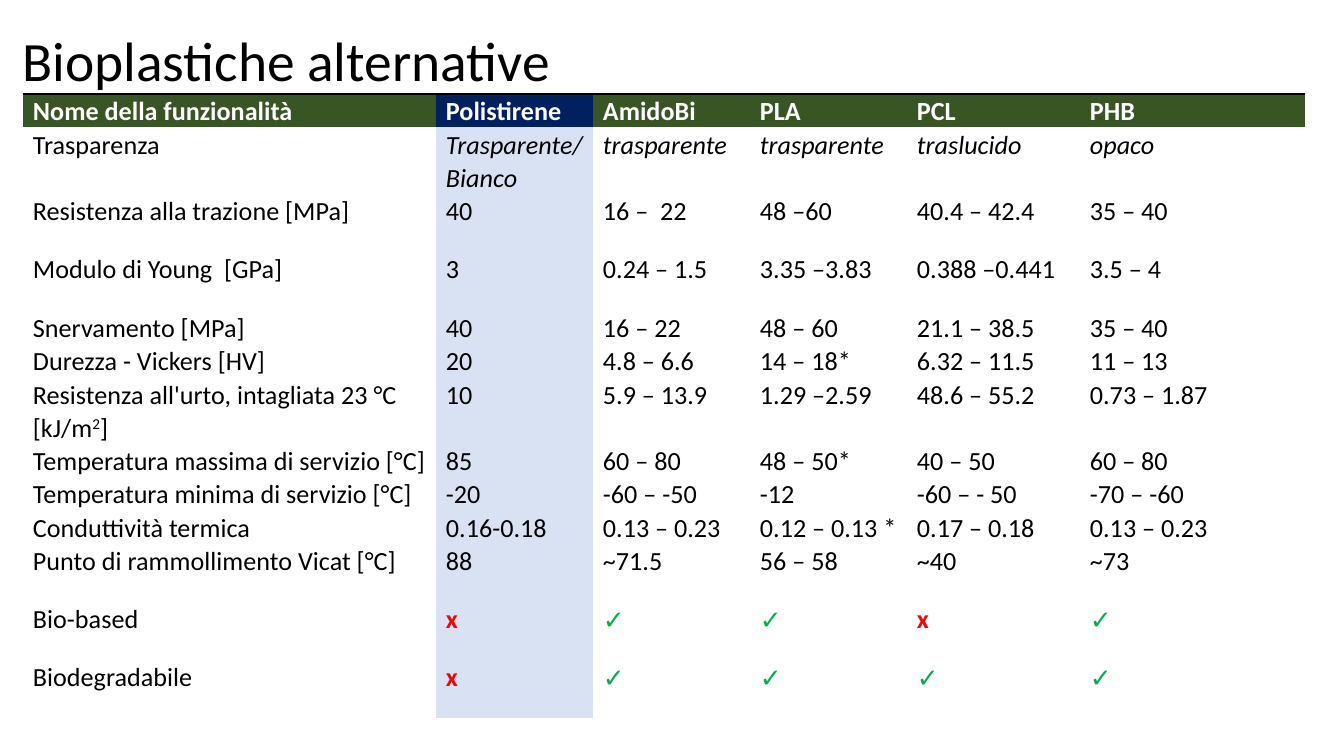
from lxml import etree
from pptx import Presentation
from pptx.dml.color import RGBColor
from pptx.enum.text import MSO_ANCHOR
from pptx.oxml.ns import qn
from pptx.util import Pt

EMU_PER_PX = 914400 / 134.4
TOP = MSO_ANCHOR.TOP
NO_STYLE = "{2D5ABB26-0587-4C30-8999-92F81FD0307C}"
BLACK, WHITE, GREEN, NAVY = "000000", "FFFFFF", "385623", "002060"
PALE_BLUE, RED, TICK_GREEN = "D9E2F3", "FF0000", "00B050"

COLUMN_WIDTHS = [413, 157, 157, 157, 173, 225]
ROW_HEIGHTS = [31, 65, 58, 59] + [31] * 6 + [58] * 3
ROWS = [
    ("Nome della funzionalità", "Polistirene", "AmidoBi", "PLA", "PCL", "PHB"),
    ("Trasparenza", "Trasparente/Bianco", "trasparente", "trasparente", "traslucido", "opaco"),
    ("Resistenza alla trazione [MPa]", "40", "16 –  22", "48 –60", "40.4 – 42.4", "35 – 40"),
    ("Modulo di Young  [GPa]", "3", "0.24 – 1.5", "3.35 –3.83", "0.388 –0.441", "3.5 – 4"),
    ("Snervamento [MPa]", "40", "16 – 22", "48 – 60", "21.1 – 38.5", "35 – 40"),
    ("Durezza - Vickers [HV]", "20", "4.8 – 6.6", "14 – 18*", "6.32 – 11.5", "11 – 13"),
    ("Resistenza all'urto, intagliata 23 °C [kJ/m^2^]", "10", "5.9 – 13.9", "1.29 –2.59",
     "48.6 – 55.2", "0.73 – 1.87"),
    ("Temperatura massima di servizio [°C]", "85", "60 – 80", "48 – 50*", "40 – 50", "60 – 80"),
    ("Temperatura minima di servizio [°C]", "-20", "-60 – -50", "-12", "-60 – - 50", "-70 – -60"),
    ("Conduttività termica", "0.16-0.18", "0.13 – 0.23", "0.12 – 0.13 *", "0.17 – 0.18",
     "0.13 – 0.23"),
    ("Punto di rammollimento Vicat [°C]", "88", "~71.5", "56 – 58", "~40", "~73"),
    ("Bio-based", "x", "✓", "✓", "x", "✓"),
    ("Biodegradabile", "x", "✓", "✓", "✓", "✓"),
]


def px(length):
    return round(length * EMU_PER_PX)


def color(value):
    return RGBColor.from_string(value)


class SlideBuilder:
    font = "Calibri"
    table_size = 14

    def __init__(self, slide):
        self.slide = slide

    def fill_paragraph(self, para, text, size, ink=BLACK, bold=False, italic=False, font=None):
        """Fill a paragraph; text between carets is superscript."""
        para.font.name = font or self.font
        para.font.size = Pt(size)
        para.font.bold, para.font.italic = bold, italic
        para.font.color.rgb = color(ink)
        for index, part in enumerate(text.split("^")):
            span = para.add_run()
            span.text = part
            if index % 2:
                span._r.get_or_add_rPr().set("baseline", "30000")

    def title(self, text, left, top, width, height):
        box = self.slide.shapes.add_textbox(px(left), px(top), px(width), px(height))
        frame = box.text_frame
        frame.word_wrap = True
        frame.vertical_anchor = TOP
        frame.margin_top = px(10)
        self.fill_paragraph(frame.paragraphs[0], text, 29.7)

    def top_border(self, cell):
        line = etree.Element(qn("a:lnT"), w=str(Pt(1)))
        fill = etree.SubElement(line, qn("a:solidFill"))
        etree.SubElement(fill, qn("a:srgbClr"), val=BLACK)
        cell._tc.get_or_add_tcPr().insert(0, line)

    def cell(self, cell, text, fill, **style):
        cell.margin_left = cell.margin_right = px(10)
        cell.margin_top = cell.margin_bottom = 0
        if fill:
            cell.fill.solid()
            cell.fill.fore_color.rgb = color(fill)
        else:
            cell.fill.background()
        para = cell.text_frame.paragraphs[0]
        para.line_spacing = 1.06
        self.fill_paragraph(para, text, self.table_size, **style)

    def table(self, rows, left, top, widths, heights):
        frame = self.slide.shapes.add_table(
            len(rows), len(widths), px(left), px(top), px(sum(widths)), px(sum(heights)))
        table = frame.table
        table._tbl.tblPr.find(qn("a:tableStyleId")).text = NO_STYLE
        table.horz_banding = False
        for column, width in zip(table.columns, widths):
            column.width = px(width)
        for row, height in zip(table.rows, heights):
            row.height = px(height)

        for r, row in enumerate(rows):
            for c, text in enumerate(row):
                cell = table.cell(r, c)
                reference = c == 1  # polystyrene column
                if r == 0:
                    self.cell(cell, text, NAVY if reference else GREEN, ink=WHITE, bold=True)
                    self.top_border(cell)
                    continue
                style = {"italic": r == 1 and c > 0}
                if text == "x":
                    style.update(ink=RED, bold=True)
                elif text == "✓":
                    style.update(ink=TICK_GREEN, bold=True, font="Lato")
                self.cell(cell, text, PALE_BLUE if reference else None, **style)


def main():
    deck = Presentation()
    deck.slide_width, deck.slide_height = px(1344), px(756)
    page = SlideBuilder(deck.slides.add_slide(deck.slide_layouts[6]))

    # Heading
    page.title("Bioplastiche alternative", 9, 16, 809, 140)

    # Comparison of materials
    page.table(ROWS, 23, 94, COLUMN_WIDTHS, ROW_HEIGHTS)

    deck.save("out.pptx")


if __name__ == "__main__":
    main()
